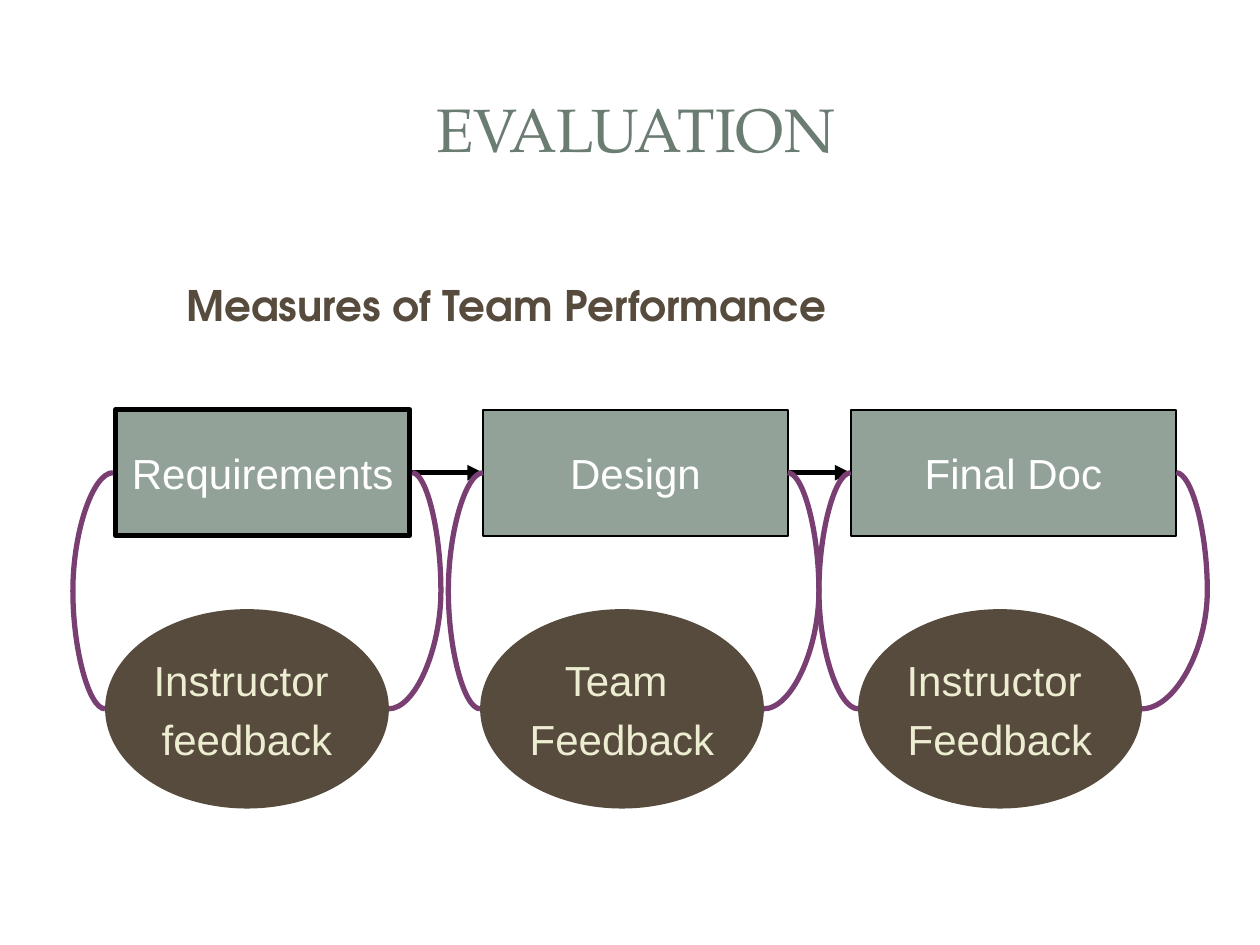
from lxml import etree
from pptx import Presentation
from pptx import util as u
from pptx.dml import color
from pptx.enum import shapes, text
from pptx.oxml import ns

COLOURS = {"title": "6B7D72", "brown": "564B3C", "sage": "93A299",
           "white": "FFFFFF", "cream": "ECEDD1", "black": "000000",
           "purple": "793F73"}
TITLE = {"name": "TeX Gyre Pagella", "size": u.Pt(35)}
HEADING = {"name": "TeX Gyre Adventor", "size": u.Pt(24), "bold": True}
LABEL = {"name": "Arial", "size": u.Pt(24)}
CENTRED = {"alignment": text.PP_ALIGN.CENTER}
SPACED = {"space_before": u.Pt(4.8)}
MIDDLE = {"vertical_anchor": text.MSO_ANCHOR.MIDDLE, "word_wrap": True}
UNWRAPPED = {**MIDDLE, "word_wrap": False}

STAGE_LEFT, STAGE_STEP, STAGE_TOP, STAGE_HEIGHT = 2.33, 7.41, 8.26, 2.54
OVAL_TOP, OVAL_WIDTH, OVAL_HEIGHT = 12.28, 5.72, 4.02
STAGES = [
    {"name": "Requirements", "width": 5.93, "border": 3, "lip": 0.05,
     "lines": ["Instructor ", "feedback"], "oval": 2.12, "bends": (1.47, 8.89)},
    {"name": "Design", "width": 6.14, "border": 1, "lip": 0,
     "lines": ["Team ", "Feedback"], "oval": 9.68, "bends": (9.04, 16.51)},
    {"name": "Final Doc", "width": 6.56, "border": 1, "lip": 0,
     "lines": ["Instructor ", "Feedback"], "oval": 17.3, "bends": (16.51, 24.34)},
]


def apply_format(target, values):
    """Set every attribute in a dict of format values."""
    for name, value in values.items():
        setattr(target, name, value)


def rgb(name):
    """Look up a named colour."""
    return color.RGBColor.from_string(COLOURS[name])


def write(shape, lines, colour, font, frame_format, para_format):
    """Fill a shape with one paragraph per line."""
    frame = shape.text_frame
    apply_format(frame, frame_format)
    for index, line in enumerate(lines):
        para = frame.add_paragraph() if index else frame.paragraphs[0]
        apply_format(para, para_format)
        span = para.add_run()
        span.text = line
        apply_format(span.font, font)
        span.font.color.rgb = rgb(colour)


def add_filled(page, kind, box, fill, border=0):
    """Add a flat preset shape with an optional black border."""
    shape = page.shapes.add_shape(kind, *map(u.Cm, box))
    shape.shadow.inherit = False
    shape.fill.solid()
    shape.fill.fore_color.rgb = rgb(fill)
    if border:
        shape.line.color.rgb = rgb("black")
        shape.line.width = u.Pt(border)
    else:
        shape.line.fill.background()
    return shape


def add_link(page, kind, start, end, colour):
    """Add a flat three-point connector between two points."""
    link = page.shapes.add_connector(kind, *map(u.Cm, (*start, *end)))
    link.line.color.rgb = rgb(colour)
    link.line.width = u.Pt(3)
    etree.SubElement(link._element.spPr, ns.qn("a:effectLst"))
    return link


def add_arrow(page, start, end):
    """Add a straight arrow pointing at its end."""
    link = add_link(page, shapes.MSO_CONNECTOR.STRAIGHT, start, end, "black")
    etree.SubElement(link.line._get_or_add_ln(), ns.qn("a:tailEnd"), type="triangle")


def add_loop(page, start, end, bend):
    """Add a curve that bulges out to the horizontal position of its bend."""
    link = add_link(page, shapes.MSO_CONNECTOR.CURVE, start, end, "purple")
    ratio = (bend - start[0]) / (end[0] - start[0])
    guides = link._element.spPr.find(ns.qn("a:prstGeom")).get_or_add_avLst()
    etree.SubElement(guides, ns.qn("a:gd"), name="adj1",
                     fmla=f"val {round(ratio * 100000)}")


def add_title(page, box):
    """Place the slide title."""
    shape = page.shapes.add_textbox(*map(u.Cm, box))
    write(shape, [" EVALUATION"], "title", TITLE, MIDDLE, CENTRED)


def add_heading(page, box):
    """Place the indented heading above the diagram."""
    shape = page.shapes.add_textbox(*map(u.Cm, box))
    write(shape, ["Measures of Team Performance"], "brown", HEADING,
          {"word_wrap": True, "margin_left": u.Cm(0.58)}, SPACED)


def add_stage(page, stage, box):
    """Place one process stage."""
    shape = add_filled(page, shapes.MSO_SHAPE.RECTANGLE, box, "sage", stage["border"])
    write(shape, [stage["name"]], "white", LABEL, UNWRAPPED, CENTRED)


def add_feedback(page, stage, box):
    """Place the feedback oval under a stage and the two curves joining them."""
    left, top, width, height = box
    oval_left, middle = stage["oval"], OVAL_TOP + OVAL_HEIGHT / 2
    oval = add_filled(page, shapes.MSO_SHAPE.OVAL,
                      (oval_left, OVAL_TOP, OVAL_WIDTH, OVAL_HEIGHT), "brown")
    write(oval, stage["lines"], "cream", LABEL, UNWRAPPED, {**CENTRED, **SPACED})
    level, lip = top + height / 2, stage["lip"]
    left_bend, right_bend = stage["bends"]
    add_loop(page, (left - lip, level), (oval_left, middle), left_bend)
    add_loop(page, (oval_left + OVAL_WIDTH, middle),
             (left + width + lip, level), right_bend)


def add_process(page):
    """Place the stages, the arrows between them and their feedback loops."""
    boxes = [(STAGE_LEFT + index * STAGE_STEP, STAGE_TOP, stage["width"], STAGE_HEIGHT)
             for index, stage in enumerate(STAGES)]
    level = STAGE_TOP + STAGE_HEIGHT / 2
    for stage, box in zip(STAGES, boxes):
        add_stage(page, stage, box)
    for stage, box, following in zip(STAGES, boxes, boxes[1:]):
        add_arrow(page, (box[0] + box[2] + stage["lip"], level), (following[0], level))
    for stage, box in zip(STAGES, boxes):
        add_feedback(page, stage, box)


def main():
    """Build and save the evaluation slide."""
    deck = Presentation()
    apply_format(deck, {"slide_width": u.Cm(25.4), "slide_height": u.Cm(19.05)})
    page = deck.slides.add_slide(deck.slide_layouts[6])
    add_title(page, (1.19, 1.14, 22.94, 2.9))
    add_heading(page, (3.18, 5.51, 19.05, 2.11))
    add_process(page)
    deck.save("out.pptx")


if __name__ == "__main__":
    main()
